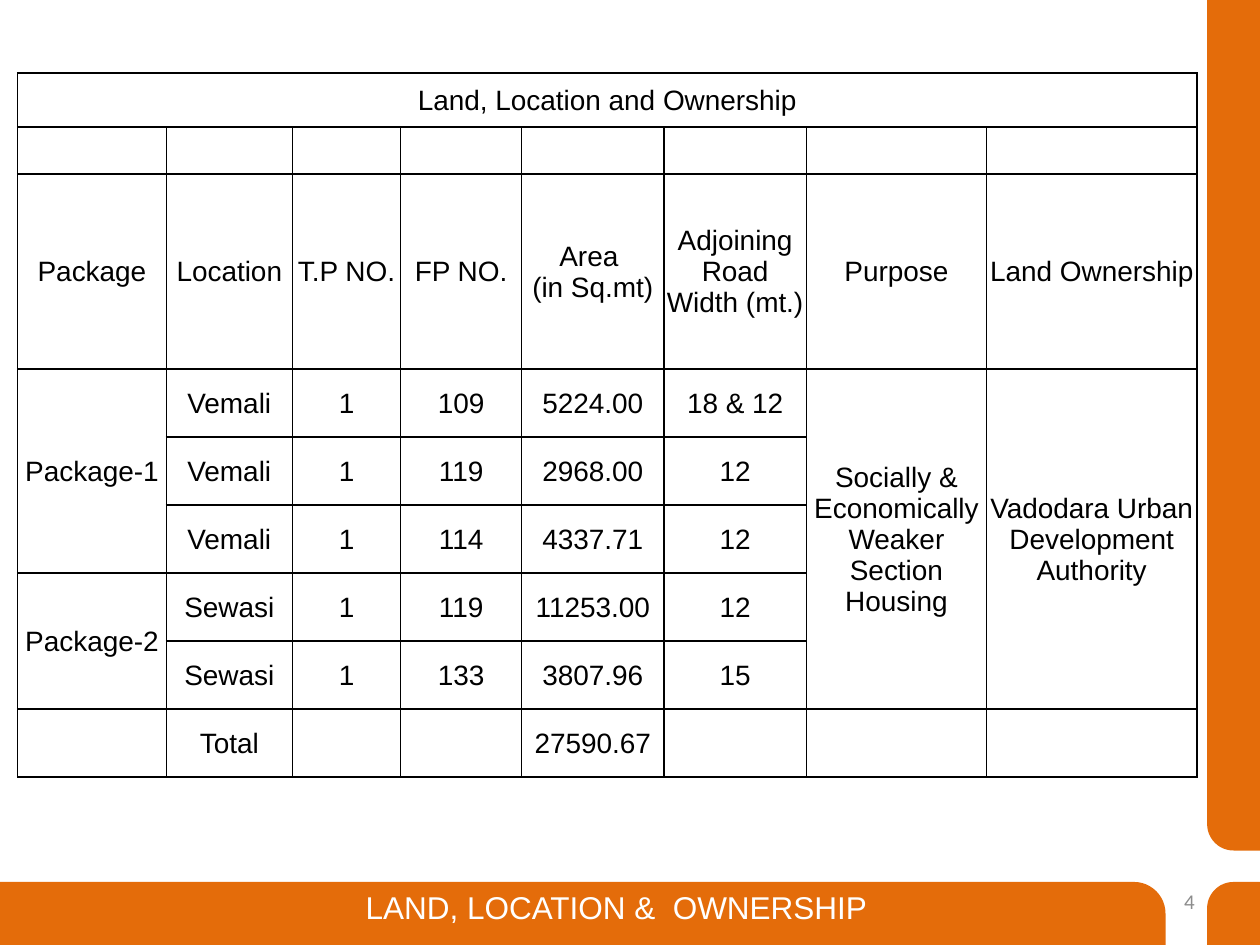
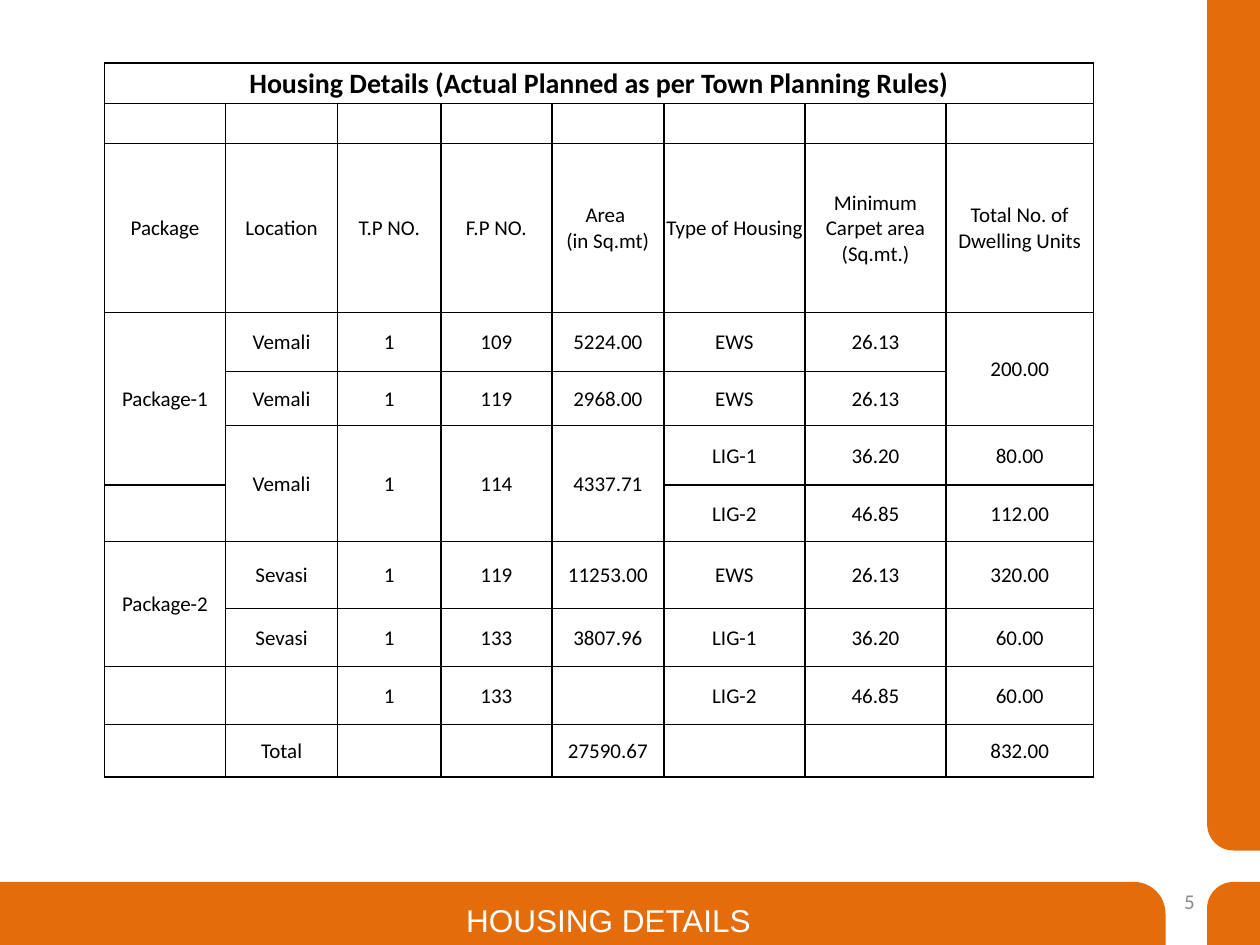
from lxml import etree
from pptx import Presentation
from pptx.dml.color import RGBColor
from pptx.enum.shapes import MSO_SHAPE
from pptx.enum.text import MSO_ANCHOR, MSO_AUTO_SIZE, PP_ALIGN
from pptx.oxml.ns import qn
from pptx.util import Inches, Pt

ROUND_ONE = MSO_SHAPE.ROUND_1_RECTANGLE
TOP, MIDDLE = MSO_ANCHOR.TOP, MSO_ANCHOR.MIDDLE
CENTER, RIGHT = PP_ALIGN.CENTER, PP_ALIGN.RIGHT
NO_RESIZE = MSO_AUTO_SIZE.NONE

ORANGE = RGBColor(0xE4, 0x6C, 0x0A)
GRAY = RGBColor(0x8C, 0x8C, 0x8C)
WHITE = RGBColor(0xFF, 0xFF, 0xFF)
BLACK = RGBColor(0x00, 0x00, 0x00)

SLIDE_WIDTH, SLIDE_HEIGHT = 10, 7.5
FOOTER_HEIGHT = 0.5
FOOTER_TOP = SLIDE_HEIGHT - FOOTER_HEIGHT
FOOTER_WIDTH = 9.25
SIDE_WIDTH = 0.42
SIDE_LEFT = SLIDE_WIDTH - SIDE_WIDTH
SIDE_HEIGHT = 6.75
TITLE_HEIGHT = 0.4
BORDER_WIDTH = Pt(1)

BANDS = [
    (0, FOOTER_TOP, FOOTER_WIDTH, FOOTER_HEIGHT, False, 0),
    (SIDE_LEFT, FOOTER_TOP, SIDE_WIDTH, FOOTER_HEIGHT, True, 0),
    (SIDE_LEFT, 0, SIDE_WIDTH, SIDE_HEIGHT, False, 180),
]

EMPTY_ROW = [""] * 8

PAGES = [
    {
        "title": "LAND, LOCATION &  OWNERSHIP ",
        "title_left": 2.77, "title_top": 7, "title_width": 4.31,
        "number": "4",
        "table_left": 0.14, "table_top": 0.58,
        "font": "Arial", "body_size": 16, "heading_bold": False,
        "columns": [1.18, 1, 0.86, 0.96, 1.13, 1.13, 1.43, 1.67],
        "rows": [0.43, 0.37, 1.55] + [0.54] * 6,
        "merges": [(0, 0, 1, 8), (3, 0, 3, 1), (6, 0, 2, 1), (3, 6, 5, 1), (3, 7, 5, 1)],
        "cells": [
            ["Land, Location and Ownership"],
            EMPTY_ROW,
            ["Package", "Location", "T.P NO.", "FP NO.", "Area \v(in Sq.mt)",
             "Adjoining Road Width (mt.)", "Purpose", "Land Ownership"],
            ["Package-1", "Vemali", "1", "109", "5224.00", "18 & 12",
             "Socially & Economically Weaker Section Housing",
             "Vadodara Urban Development Authority"],
            ["", "Vemali", "1", "119", "2968.00", "12"],
            ["", "Vemali", "1", "114", "4337.71", "12"],
            ["Package-2", "Sewasi", "1", "119", "11253.00", "12"],
            ["", "Sewasi", "1", "133", "3807.96", "15"],
            ["", "Total", "", "", "27590.67"],
        ],
    },
    {
        "title": "HOUSING DETAILS",
        "title_left": 3.58, "title_top": 7.1, "title_width": 2.5,
        "number": "5",
        "table_left": 0.83, "table_top": 0.5,
        "font": "Calibri", "body_size": 12, "heading_bold": True,
        "columns": [0.96, 0.89, 0.82, 0.88, 0.89, 1.12, 1.12, 1.17],
        "rows": [0.32, 0.32, 1.34, 0.47, 0.43, 0.47, 0.45, 0.53, 0.46, 0.46, 0.42],
        "merges": [(0, 0, 1, 8), (3, 0, 3, 1), (7, 0, 2, 1), (3, 7, 2, 1)]
        + [(5, column, 2, 1) for column in range(1, 5)],
        "cells": [
            ["Housing Details (Actual Planned as per Town Planning Rules)"],
            EMPTY_ROW,
            ["Package", "Location", "T.P NO.", "F.P NO.", "Area \v(in Sq.mt)",
             "Type of Housing", "Minimum Carpet area (Sq.mt.)",
             "Total No. of Dwelling Units"],
            ["Package-1", "Vemali", "1", "109", "5224.00", "EWS", "26.13", "200.00"],
            ["", "Vemali", "1", "119", "2968.00", "EWS", "26.13"],
            ["", "Vemali", "1", "114", "4337.71", "LIG-1", "36.20", "80.00"],
            ["", "", "", "", "", "LIG-2", "46.85", "112.00"],
            ["Package-2", "Sevasi", "1", "119", "11253.00", "EWS", "26.13", "320.00"],
            ["", "Sevasi", "1", "133", "3807.96", "LIG-1", "36.20", "60.00"],
            ["", "", "1", "133", "", "LIG-2", "46.85", "60.00"],
            ["", "Total", "", "", "27590.67", "", "", "832.00"],
        ],
    },
]


def write_text(frame, text, font, size, color, alignment, bold=False):
    frame.text = text
    para = frame.paragraphs[0]
    para.alignment = alignment
    for span in para.runs:
        span.font.name = font
        span.font.size = Pt(size)
        span.font.bold = bold
        span.font.color.rgb = color


def add_borders(cell):
    properties = cell._tc.get_or_add_tcPr()
    for index, side in enumerate(("a:lnL", "a:lnR", "a:lnT", "a:lnB")):
        line = etree.Element(qn(side), w=str(BORDER_WIDTH))
        fill = etree.SubElement(line, qn("a:solidFill"))
        etree.SubElement(fill, qn("a:srgbClr"), val=str(BLACK))
        properties.insert(index, line)


deck = Presentation()
deck.slide_width = Inches(SLIDE_WIDTH)
deck.slide_height = Inches(SLIDE_HEIGHT)
title_only = deck.slide_layouts[5]

for page in PAGES:
    slide = deck.slides.add_slide(title_only)

    number = slide.shapes.add_textbox(Inches(7.25), Inches(6.95), Inches(2.33), Inches(0.4))
    number.text_frame.word_wrap = True
    number.text_frame.vertical_anchor = MIDDLE
    write_text(number.text_frame, page["number"], "Calibri", 12, GRAY, RIGHT)

    bands = slide.shapes.add_group_shape()
    for left, top, width, height, flipped, rotation in BANDS:
        band = bands.shapes.add_shape(
            ROUND_ONE, Inches(left), Inches(top), Inches(width), Inches(height))
        band.adjustments[0] = 0.5
        band.rotation = rotation
        band.shadow.inherit = False
        band.fill.solid()
        band.fill.fore_color.rgb = ORANGE
        band.line.fill.background()
        if flipped:
            band._element.spPr.xfrm.set("flipH", "1")

    title = slide.shapes.title
    title.left, title.top = Inches(page["title_left"]), Inches(page["title_top"])
    title.width, title.height = Inches(page["title_width"]), Inches(TITLE_HEIGHT)
    title.text_frame.word_wrap = False
    title.text_frame.auto_size = NO_RESIZE
    title.text_frame.vertical_anchor = TOP
    write_text(title.text_frame, page["title"], "Arial", 18, WHITE, CENTER)
    slide.shapes._spTree.append(title._element)

    frame = slide.shapes.add_table(
        len(page["rows"]), len(page["columns"]),
        Inches(page["table_left"]), Inches(page["table_top"]),
        Inches(sum(page["columns"])), Inches(sum(page["rows"])))
    table = frame.table
    table.first_row = False
    table.horz_banding = False
    for column, width in zip(table.columns, page["columns"]):
        column.width = Inches(width)

    for row_index, height in enumerate(page["rows"]):
        table.rows[row_index].height = Inches(height)
        texts = page["cells"][row_index]
        heading = row_index == 0
        size = 16 if heading else page["body_size"]
        for column_index, cell in enumerate(table.rows[row_index].cells):
            cell.margin_left = cell.margin_top = cell.margin_right = Inches(0.01)
            cell.margin_bottom = 0
            cell.vertical_anchor = MIDDLE
            cell.fill.background()
            add_borders(cell)
            if column_index < len(texts) and texts[column_index]:
                write_text(cell.text_frame, texts[column_index], page["font"], size,
                           BLACK, CENTER, heading and page["heading_bold"])
            else:
                ending = cell.text_frame.paragraphs[0]._p.get_or_add_endParaRPr()
                ending.set("sz", str(page["body_size"] * 100))

    for row, column, row_count, column_count in page["merges"]:
        last = table.cell(row + row_count - 1, column + column_count - 1)
        table.cell(row, column).merge(last)

deck.save("out.pptx")
